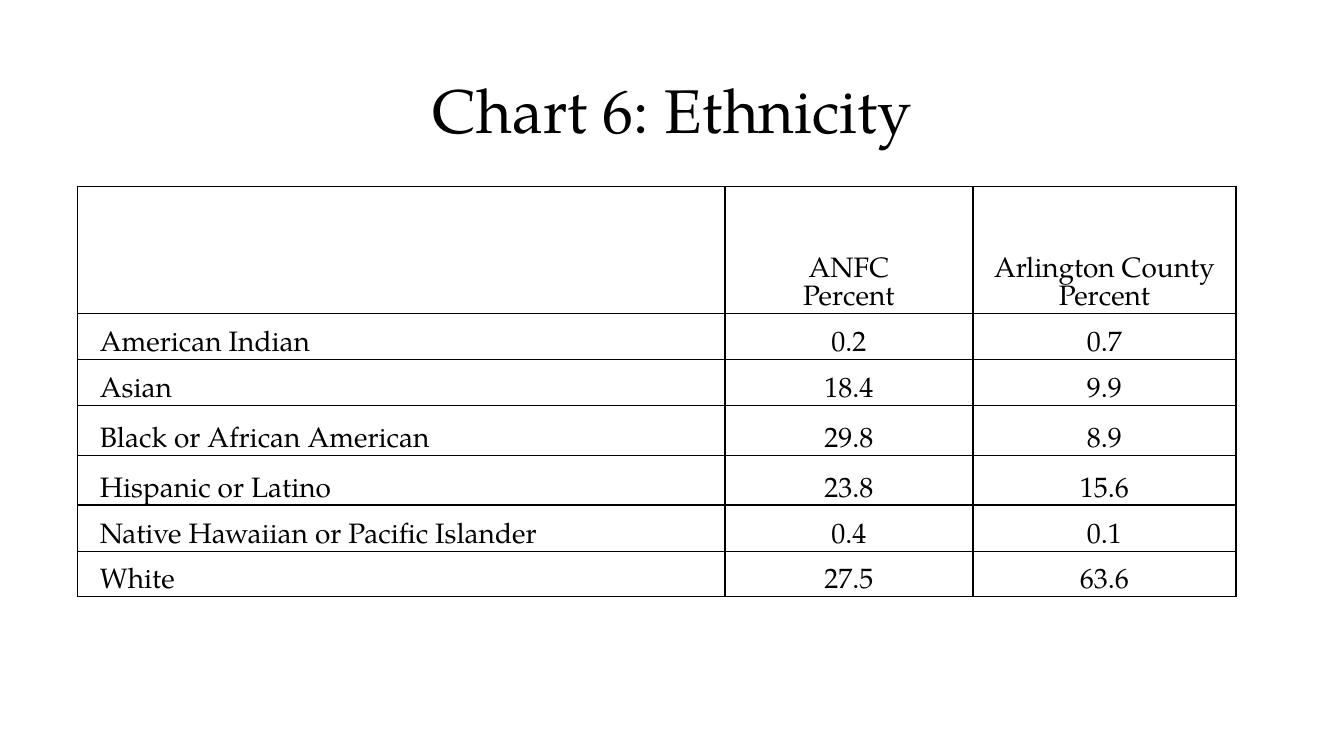
import pptx
import pptx.util
import pptx.dml.color
import pptx.enum.text
import pptx.oxml
import pptx.oxml.ns
from pptx.util import Inches

FONT = "TeX Gyre Pagella"
BLACK = pptx.dml.color.RGBColor(0, 0, 0)
WHITE = pptx.dml.color.RGBColor(255, 255, 255)
CENTER = pptx.enum.text.PP_ALIGN.CENTER
LEFT = pptx.enum.text.PP_ALIGN.LEFT
ANCHOR = pptx.enum.text.MSO_ANCHOR

COLUMN_WIDTHS = [6.42, 2.46, 2.61]
ROW_HEIGHTS = [1.26, 0.46, 0.45, 0.5, 0.49, 0.46, 0.45]
ROWS = [
    ("", "ANFC\nPercent", "Arlington County Percent"),
    ("American Indian", "0.2", "0.7"),
    ("Asian", "18.4", "9.9"),
    ("Black or African American", "29.8", "8.9"),
    ("Hispanic or Latino", "23.8", "15.6"),
    ("Native Hawaiian or Pacific Islander", "0.4", "0.1"),
    ("White", "27.5", "63.6"),
]


def add_run(p, text, size):
    """Add one run in the slide's font and colour."""
    r = p.add_run()
    r.text = text
    r.font.name = FONT
    r.font.size = pptx.util.Pt(size)
    r.font.color.rgb = BLACK


def set_title(s, text):
    """Place and fill the title placeholder."""
    sp = s.shapes.title
    sp.left, sp.top = Inches(0.92), Inches(0.4)
    sp.width, sp.height = Inches(11.5), Inches(1.45)
    tf = sp.text_frame
    tf.vertical_anchor = ANCHOR.MIDDLE
    p = tf.paragraphs[0]
    p.alignment = CENTER
    p.line_spacing = 0.9
    add_run(p, text, 44)


def set_borders(cell):
    """Draw thin black lines on all four sides of a cell."""
    tcPr = cell._tc.get_or_add_tcPr()
    for i, side in enumerate(("lnL", "lnR", "lnT", "lnB")):
        tcPr.insert(i, pptx.oxml.parse_xml(
            f'<a:{side} {pptx.oxml.ns.nsdecls("a")} w="12700"><a:solidFill>'
            f'<a:srgbClr val="{BLACK}"/></a:solidFill></a:{side}>'))


def fill_cell(cell, text, is_label, is_header):
    """Format one table cell and write its lines of text."""
    cell.fill.solid()
    cell.fill.fore_color.rgb = WHITE
    set_borders(cell)
    cell.vertical_anchor = ANCHOR.BOTTOM
    cell.margin_left = Inches(0.22 if is_label else 0.01)
    cell.margin_right = cell.margin_top = Inches(0.01)
    cell.margin_bottom = 0
    tf = cell.text_frame
    for i, line in enumerate(text.split("\n")):
        p = tf.add_paragraph() if i else tf.paragraphs[0]
        p.alignment = LEFT if is_label else CENTER
        if is_header:
            p.line_spacing = pptx.util.Pt(20)
        if line:
            add_run(p, line, 20)


def add_ethnicity_table(s):
    """Add the table of percentages by ethnicity."""
    frame = s.shapes.add_table(
        len(ROWS), len(COLUMN_WIDTHS), Inches(0.77), Inches(1.85),
        Inches(sum(COLUMN_WIDTHS)), Inches(sum(ROW_HEIGHTS)))
    table = frame.table
    table.first_row = table.horz_banding = False
    for column, width in zip(table.columns, COLUMN_WIDTHS):
        column.width = Inches(width)
    for i, (height, values) in enumerate(zip(ROW_HEIGHTS, ROWS)):
        table.rows[i].height = Inches(height)
        for j, text in enumerate(values):
            fill_cell(table.cell(i, j), text, j == 0, i == 0)


def main():
    """Build and save the slide."""
    prs = pptx.Presentation()
    prs.slide_width, prs.slide_height = Inches(13.33), Inches(7.5)
    s = prs.slides.add_slide(prs.slide_layouts[5])
    set_title(s, "Chart 6: Ethnicity")
    add_ethnicity_table(s)
    prs.save("out.pptx")


if __name__ == "__main__":
    main()
